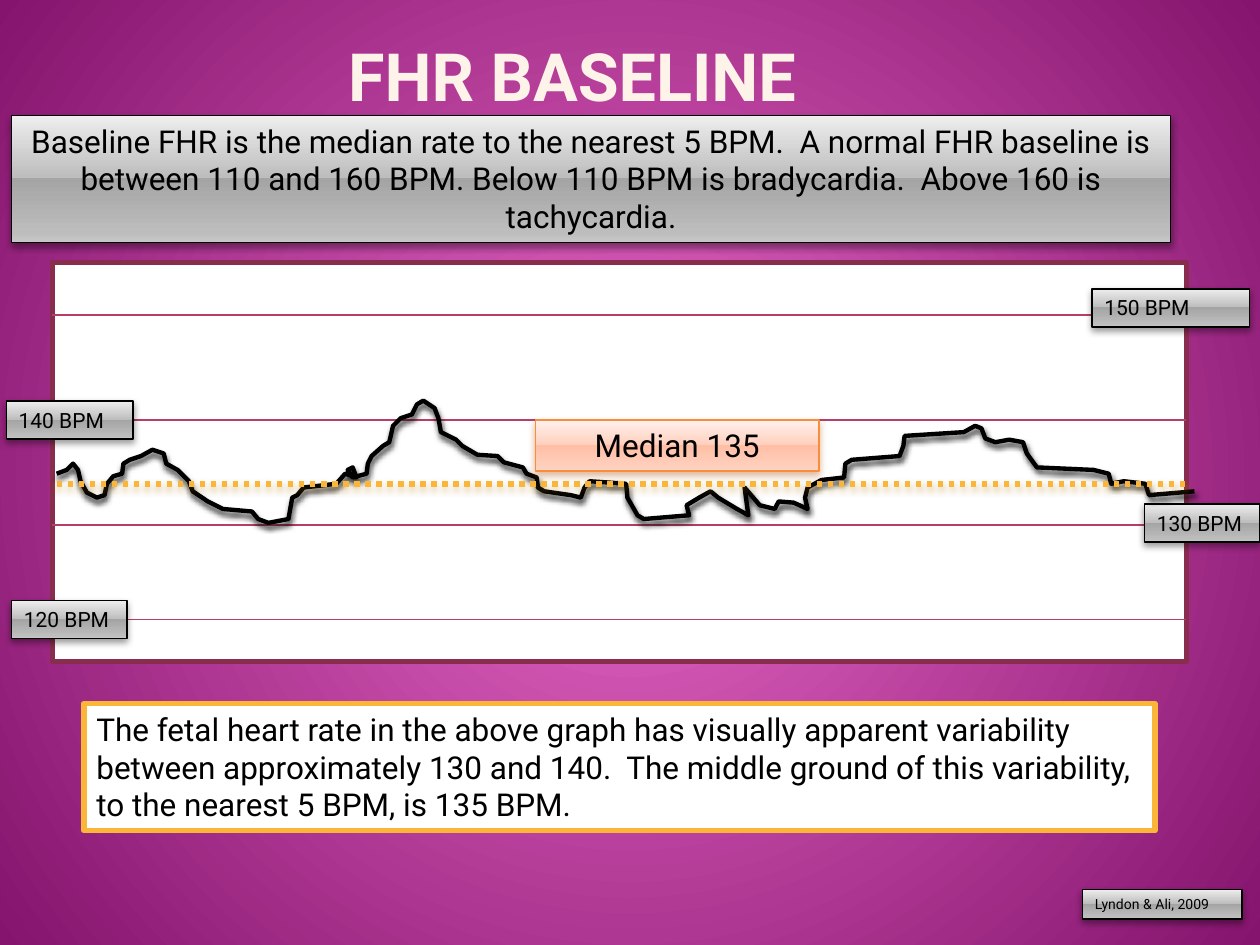
"""Build the fetal heart rate baseline slide."""
import dataclasses

import lxml.etree
import pptx
import pptx.dml.color
import pptx.enum.dml
import pptx.enum.shapes
import pptx.enum.text
import pptx.oxml.ns
import pptx.util

COLUMNS, ROWS = 120, 90
ALIGN = pptx.enum.text.PP_ALIGN
ANCHOR = pptx.enum.text.MSO_ANCHOR
TRACE = [
    (45, 376), (53, 373), (58, 368), (62, 373), (64, 382), (69, 391), (77, 395), (83, 393), (85, 384),
    (90, 378), (97, 376), (98, 368), (103, 365), (112, 362), (121, 357), (130, 360), (132, 368),
    (141, 373), (150, 382), (153, 390), (165, 398), (177, 404), (200, 406), (205, 412), (213, 415),
    (229, 412), (232, 395), (236, 393), (241, 387), (267, 384), (274, 376), (283, 379), (280, 371),
    (276, 373), (280, 379), (291, 376), (292, 368), (295, 362), (304, 354), (309, 351), (312, 338),
    (318, 332), (327, 329), (331, 321), (336, 318), (345, 324), (348, 332), (350, 343), (362, 349),
    (367, 354), (379, 361), (395, 362), (400, 367), (415, 371), (418, 376), (426, 379), (427, 387),
    (432, 390), (453, 393), (461, 395), (464, 387), (468, 382), (497, 384), (498, 395), (506, 409),
    (511, 412), (547, 409), (545, 401), (555, 395), (564, 390), (570, 395), (585, 404), (594, 409),
    (591, 387), (603, 401), (615, 404), (618, 398), (630, 399), (641, 404), (639, 395), (641, 387),
    (652, 381), (670, 379), (671, 368), (676, 365), (714, 362), (717, 354), (718, 346), (765, 343),
    (774, 338), (779, 340), (782, 348), (790, 351), (801, 349), (812, 351), (815, 360), (823, 371),
    (868, 373), (880, 376), (882, 384), (892, 382), (909, 384), (912, 393), (948, 390),
]


@dataclasses.dataclass(frozen=True)
class Theme:
    """Hold the colours, font and type sizes."""
    font: str = "Roboto"
    title_size: int = 38
    body_size: int = 18
    label_size: int = 12
    source_size: int = 8
    title: str = "FEF3E8"
    ink: str = "000000"
    paper: str = "FFFFFF"
    frame: str = "882D4D"
    rule: str = "B83D68"
    gold: str = "F9B639"
    gold_shadow: str = "B07405"
    orange: str = "FA8D3D"
    orange_shadow: str = "B04F08"
    silver: tuple = ((0, "EEEEEE"), (49, "BDBDBD"), (49, "A4A4A4"), (92, "BDBDBD"), (100, "C8C8C8"))
    peach: tuple = ((0, "FFF2EE"), (49, "FFCFBD"), (49, "FFBFA5"), (92, "FFCFBD"), (100, "FFD7C8"))
    backdrop: tuple = ((0, "E869C7"), (100, "84146D"))


THEME = Theme()


def grid(units):
    """Convert grid units to a length."""
    return pptx.util.Inches(units * 10 / COLUMNS)


def rgb(code):
    """Convert a hex code to a colour."""
    return pptx.dml.color.RGBColor.from_string(code)


def add_child(parent, tag, **attributes):
    """Append a drawing element with attributes."""
    child = lxml.etree.SubElement(parent, pptx.oxml.ns.qn(tag))
    for name, value in attributes.items():
        child.set(name, str(value))
    return child


def fill_gradient(owner, fill, stops, circular=False):
    """Fill an owner with a downward or circular gradient."""
    fill.gradient()
    gradient = owner.element.xpath(".//a:gradFill")[0]
    for child in list(gradient):
        gradient.remove(child)
    stop_list = add_child(gradient, "a:gsLst")
    for position, code in stops:
        stop = add_child(stop_list, "a:gs", pos=position * 1000)
        add_child(stop, "a:srgbClr", val=code)
    if circular:
        shade = add_child(gradient, "a:path", path="circle")
        add_child(shade, "a:fillToRect", l=50000, t=50000, r=50000, b=50000)
    else:
        add_child(gradient, "a:lin", ang=5400000, scaled=0)


def set_shadow(item, code=None, opacity=38, blur=4):
    """Clear the inherited shadow and cast a downward one if coloured."""
    effects = add_child(item.element.spPr, "a:effectLst")
    if code:
        shadow = add_child(effects, "a:outerShdw", blurRad=pptx.util.Pt(blur),
                           dist=pptx.util.Pt(2), dir=5400000, rotWithShape=0)
        colour = add_child(shadow, "a:srgbClr", val=code)
        add_child(colour, "a:alpha", val=opacity * 1000)


def set_line(item, code, width):
    """Set the colour and width of an outline."""
    item.line.color.rgb = rgb(code)
    item.line.width = pptx.util.Pt(width)


def write(frame, text, size, align=ALIGN.LEFT, code=THEME.ink, bold=False):
    """Write one formatted paragraph."""
    frame.text = text
    frame.word_wrap = True
    para = frame.paragraphs[0]
    para.alignment = align
    for span in para.runs:
        span.font.name = THEME.font
        span.font.size = pptx.util.Pt(size)
        span.font.bold = bold
        span.font.color.rgb = rgb(code)


def add_box(page, area, fill, line, width=0.9, shadow=None):
    """Add a rectangle with a plain or gradient fill."""
    box = page.shapes.add_shape(pptx.enum.shapes.MSO_SHAPE.RECTANGLE, *map(grid, area))
    if isinstance(fill, str):
        box.fill.solid()
        box.fill.fore_color.rgb = rgb(fill)
    else:
        fill_gradient(box, box.fill, fill)
    set_line(box, line, width)
    set_shadow(box, shadow)
    return box


def add_text_box(page, area, text, size, fill=THEME.silver, line=THEME.ink, width=0.9,
                 shadow=THEME.ink, align=ALIGN.LEFT):
    """Add a rectangle that holds text."""
    frame = add_box(page, area, fill, line, width, shadow).text_frame
    write(frame, text, size, align)
    frame.vertical_anchor = ANCHOR.TOP
    frame.auto_size = pptx.enum.text.MSO_AUTO_SIZE.SHAPE_TO_FIT_TEXT


def add_rule(page, left, right, row, code, width, dash=None, shadow=None):
    """Add a horizontal line."""
    rule = page.shapes.add_connector(pptx.enum.shapes.MSO_CONNECTOR.STRAIGHT,
                                     *map(grid, (left, row, right, row)))
    set_line(rule, code, width)
    if dash:
        rule.line.dash_style = dash
    set_shadow(rule, shadow)


def add_trace(page):
    """Draw the heart rate trace."""
    builder = page.shapes.build_freeform(*TRACE[0], scale=pptx.util.Inches(0.01))
    builder.add_line_segments(TRACE[1:], close=False)
    trace = builder.convert_to_shape()
    trace.fill.background()
    set_line(trace, THEME.ink, 2.5)
    set_shadow(trace, THEME.ink, 83, 3.1)


def add_title(page, text):
    """Place and format the title."""
    title = page.shapes.title
    title.left, title.top, title.width, title.height = map(grid, (7, 2, 95, 8.9))
    frame = title.text_frame
    write(frame, text, THEME.title_size, ALIGN.CENTER, THEME.title, True)
    frame.auto_size = pptx.enum.text.MSO_AUTO_SIZE.NONE
    frame.vertical_anchor = ANCHOR.BOTTOM
    frame.margin_left = frame.margin_right = pptx.util.Inches(0.05)
    frame.margin_top = frame.margin_bottom = 0


def add_graph(page):
    """Draw the strip with its rate lines, labels and trace."""
    add_box(page, (5, 25, 108, 38), THEME.paper, THEME.frame, 3.15)
    for row in (30, 40, 50, 59):
        add_rule(page, 5, 113, row, THEME.rule, 0.9)
    for rate, left, top, width in ((120, 1.1, 57.2, 11), (130, 109, 48, 11),
                                   (140, 0.6, 38.2, 12.1), (150, 104, 27.5, 15)):
        add_text_box(page, (left, top, width, 3.64), f"{rate} BPM", THEME.label_size)
    add_trace(page)
    add_rule(page, 5.4, 113, 46.1, THEME.gold, 3.15,
             pptx.enum.dml.MSO_LINE.ROUND_DOT, THEME.gold_shadow)


def main():
    """Build and save the deck."""
    deck = pptx.Presentation()
    deck.slide_width, deck.slide_height = grid(COLUMNS), grid(ROWS)
    page = deck.slides.add_slide(deck.slide_layouts[5])
    fill_gradient(page, page.background.fill, THEME.backdrop, circular=True)
    add_title(page, "FHR BASELINE")
    add_graph(page)
    add_text_box(page, (1.1, 11, 110.4, 12.12),
                 "Baseline FHR is the median rate to the nearest 5 BPM.  A normal FHR baseline is "
                 "between 110 and 160 BPM. Below 110 BPM is bradycardia.  Above 160 is tachycardia.",
                 THEME.body_size, align=ALIGN.CENTER)
    add_text_box(page, (8, 67, 102, 12.12),
                 "The fetal heart rate in the above graph has visually apparent variability between "
                 "approximately 130 and 140.  The middle ground of this variability, to the nearest "
                 "5 BPM, is 135 BPM.",
                 THEME.body_size, THEME.paper, THEME.gold, 3.15, None)
    add_text_box(page, (51, 40, 27, 4.85), "Median 135", THEME.body_size, THEME.peach,
                 THEME.orange, shadow=THEME.orange_shadow, align=ALIGN.CENTER)
    add_text_box(page, (103.1, 84.7, 15.2, 2.83), "Lyndon & Ali, 2009", THEME.source_size)
    deck.save("out.pptx")


if __name__ == "__main__":
    main()
